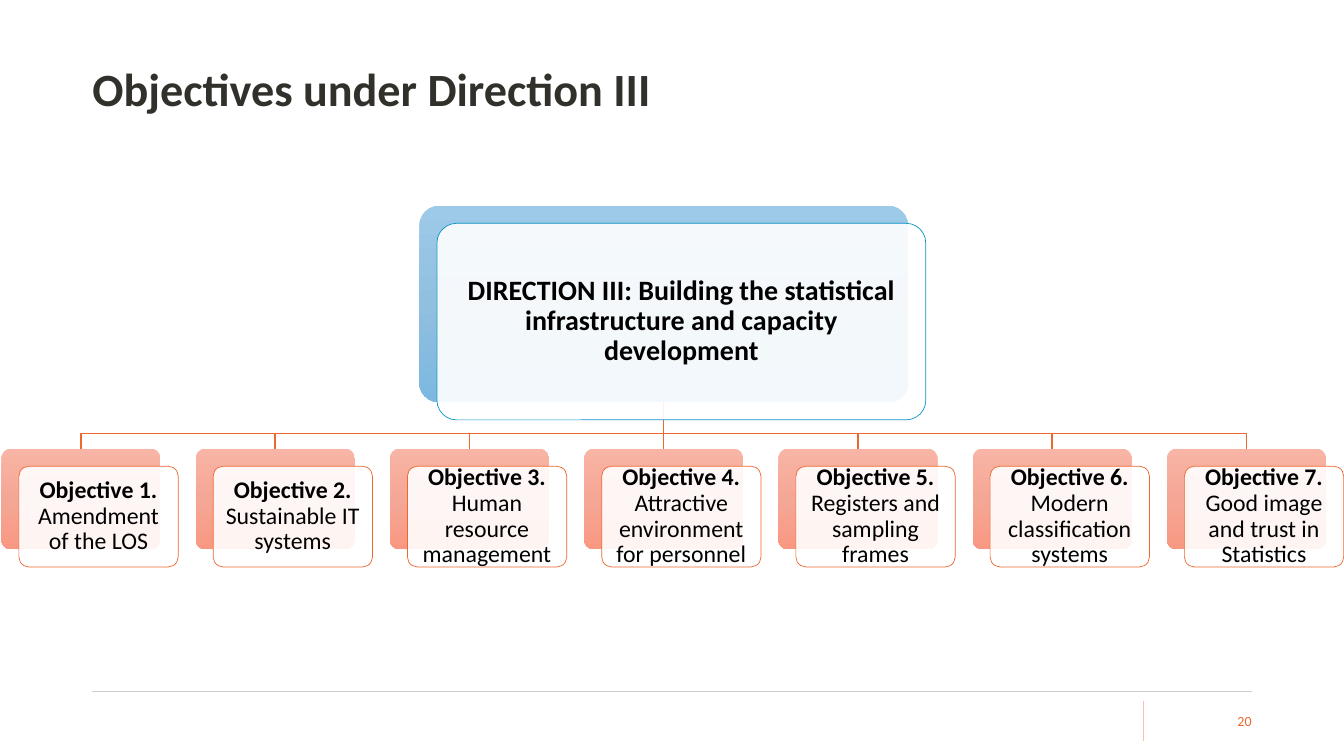
from dataclasses import dataclass
import copy
import pptx
import pptx.dml.color
import pptx.enum.shapes
import pptx.enum.text
import pptx.oxml
import pptx.oxml.ns
import pptx.util

Pt = pptx.util.Pt
Align = pptx.enum.text.PP_ALIGN
qn = pptx.oxml.ns.qn


@dataclass(frozen=True)
class Theme:
    font: str = "Calibri"
    title: str = "31302B"
    text: str = "000000"
    paper: str = "FFFFFF"
    accent: str = "EE672F"
    direction_line: str = "0D96C5"
    rule: str = "CECDC7"
    divider: str = "F8C2AC"
    blues: tuple[str, ...] = ("9ECAE9", "90BFDF", "7CB8E0")
    corals: tuple[str, ...] = ("F8B4A4", "F5A796", "F99882")
    title_size: float = 33
    direction_size: float = 20
    objective_size: float = 17
    number_size: float = 10


@dataclass(frozen=True)
class Box:
    left: float
    top: float
    width: float
    height: float

    def shifted(self, step: float) -> "Box":
        return Box(self.left + step, self.top + step, self.width, self.height)

    def inset(self, margin: float) -> "Box":
        return Box(self.left + margin, self.top + margin,
                   self.width - 2 * margin, self.height - 2 * margin)

    def lengths(self) -> tuple:
        return Pt(self.left), Pt(self.top), Pt(self.width), Pt(self.height)

    @property
    def center(self) -> float:
        return self.left + self.width / 2

    @property
    def bottom(self) -> float:
        return self.top + self.height


@dataclass(frozen=True)
class Span:
    text: str
    bold: bool = False


@dataclass(frozen=True)
class Card:
    box: Box
    gradient: tuple[str, ...]
    outline: str
    size: float
    text_inset: float
    margin: float
    spans: tuple[Span, ...]


THEME = Theme()
CARD_SHIFT = 12.6
CARD_PITCH = 138.75
BRANCH_Y = 309.6

DIRECTION = Card(
    Box(299.5, 146.9, 349.2, 140.4), THEME.blues, THEME.direction_line,
    THEME.direction_size, 4.1, 5.8,
    (Span("DIRECTION III: Building the statistical infrastructure and capacity development", True),))

OBJECTIVES = [
    "Amendment of the LOS",
    "Sustainable IT systems",
    "Human resource management",
    "Attractive environment for personnel",
    "Registers and sampling frames",
    "Modern classification systems",
    "Good image and trust in Statistics",
]


def rgb(value: str) -> pptx.dml.color.RGBColor:
    return pptx.dml.color.RGBColor.from_string(value)


def drawing_element(tag: str, attributes: str = ""):
    return pptx.oxml.parse_xml(f'<a:{tag} {pptx.oxml.ns.nsdecls("a")} {attributes}/>')


def set_line(shape, color: str, width: float) -> None:
    shape.line.color.rgb = rgb(color)
    shape.line.width = Pt(width)


def add_text(page, box: Box, spans: tuple[Span, ...], size: float, color: str,
             align, margins: tuple[float, ...], spacing: float = 0.9) -> None:
    frame = page.shapes.add_textbox(*box.lengths()).text_frame
    frame.word_wrap = True
    frame.vertical_anchor = pptx.enum.text.MSO_ANCHOR.MIDDLE
    (frame.margin_left, frame.margin_top,
     frame.margin_right, frame.margin_bottom) = map(Pt, margins)
    para = frame.paragraphs[0]
    para.text = spans[0].text
    para.alignment = align
    para.line_spacing = spacing
    for span in spans[1:]:
        para.add_run().text = span.text
    for run, span in zip(para.runs, spans):
        run.font.name = THEME.font
        run.font.size = Pt(size)
        run.font.bold = span.bold
        run.font.color.rgb = rgb(color)


def add_rule(page, start: tuple[float, float], end: tuple[float, float],
             color: str, width: float) -> None:
    rule = page.shapes.add_connector(
        pptx.enum.shapes.MSO_CONNECTOR.STRAIGHT, *map(Pt, start + end))
    set_line(rule, color, width)
    rule._element.spPr.append(drawing_element("effectLst"))


def add_branch(page, parent: Box, child: Box) -> None:
    start = (parent.center, parent.bottom)
    end = (child.center, child.top)
    if abs(start[0] - end[0]) < 1:
        add_rule(page, start, (start[0], end[1]), THEME.accent, 1)
        return
    corners = [(start[0], BRANCH_Y), (end[0], BRANCH_Y), end]
    builder = page.shapes.build_freeform(Pt(start[0]), Pt(start[1]))
    builder.add_line_segments([(Pt(x), Pt(y)) for x, y in corners], close=False)
    branch = builder.convert_to_shape()
    branch.shadow.inherit = False
    branch.fill.background()
    set_line(branch, THEME.accent, 1)


def add_rounded(page, box: Box):
    shape = page.shapes.add_shape(
        pptx.enum.shapes.MSO_SHAPE.ROUNDED_RECTANGLE, *box.lengths())
    shape.adjustments[0] = 0.1
    shape.shadow.inherit = False
    return shape


def add_card(page, card: Card) -> None:
    back = add_rounded(page, card.box)
    back.line.fill.background()
    back.fill.gradient()
    back.fill.gradient_angle = 270
    stops = back._element.spPr.find(qn("a:gradFill")).find(qn("a:gsLst"))
    stops.insert(1, copy.deepcopy(stops[0]))
    for stop, color, position in zip(back.fill.gradient_stops, card.gradient, (0, 0.5, 1)):
        stop.color.rgb = rgb(color)
        stop.position = position

    front_box = card.box.shifted(CARD_SHIFT)
    front = add_rounded(page, front_box)
    front.fill.solid()
    front.fill.fore_color.rgb = rgb(THEME.paper)
    color = front._element.spPr.find(qn("a:solidFill"))[0]
    color.append(drawing_element("alpha", 'val="90000"'))
    set_line(front, card.outline, 0.5)
    add_text(page, front_box.inset(card.text_inset), card.spans, card.size,
             THEME.text, Align.CENTER, (card.margin,) * 4)


def objective_card(index: int, wording: str) -> Card:
    box = Box(0.9 + index * CARD_PITCH, 320.4, 113.8, 72)
    spans = (Span(f"Objective {index + 1}. ", True), Span(wording))
    return Card(box, THEME.corals, THEME.accent, THEME.objective_size, 2.1, 5, spans)


def main() -> None:
    deck = pptx.Presentation()
    deck.slide_width, deck.slide_height = Pt(960), Pt(540)
    page = deck.slides.add_slide(deck.slide_layouts[6])

    add_rule(page, (66, 494), (894, 494), THEME.rule, 0.5)
    add_rule(page, (817, 500.5), (817, 529), THEME.divider, 0.5)
    add_text(page, Box(66, 13, 754, 104.4), (Span("Objectives under Direction III", True),),
             THEME.title_size, THEME.title, Align.LEFT, (0, 3.6, 7.2, 3.6))
    add_text(page, Box(826, 500.5, 68, 28.8), (Span("20"),), THEME.number_size,
             THEME.accent, Align.RIGHT, (0, 3.6, 0, 3.6), 1.0)

    cards = [objective_card(index, wording) for index, wording in enumerate(OBJECTIVES)]
    for card in reversed(cards):
        add_branch(page, DIRECTION.box, card.box)
    for card in [DIRECTION, *cards]:
        add_card(page, card)
    deck.save("out.pptx")


if __name__ == "__main__":
    main()
